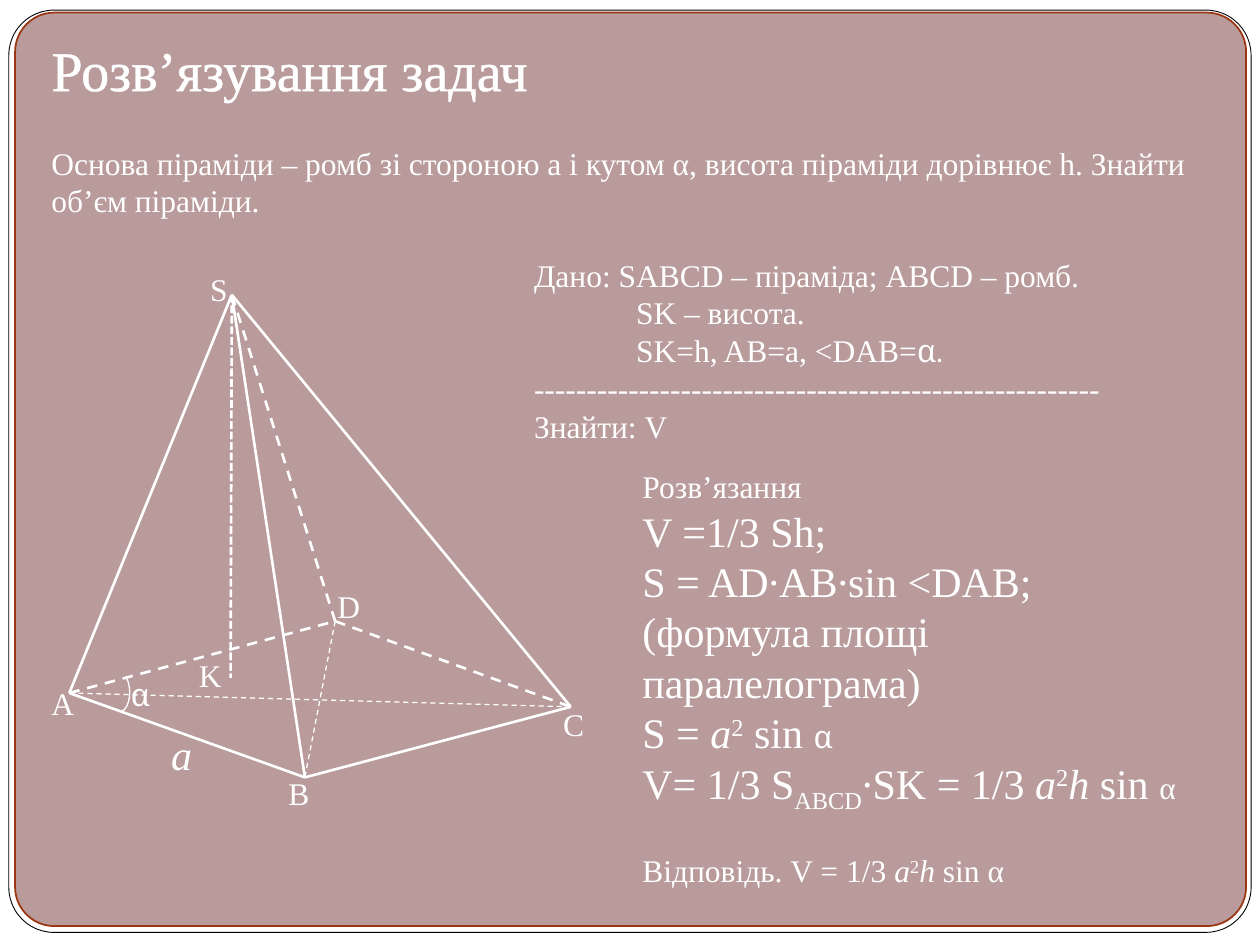
from lxml import etree
from pptx import Presentation
from pptx.dml.color import RGBColor
from pptx.enum.dml import MSO_LINE
from pptx.enum.shapes import MSO_CONNECTOR, MSO_SHAPE
from pptx.enum.text import MSO_AUTO_SIZE
from pptx.oxml.ns import qn
from pptx.util import Inches, Pt

ROUNDED = MSO_SHAPE.ROUNDED_RECTANGLE
ARC = MSO_SHAPE.ARC
STRAIGHT = MSO_CONNECTOR.STRAIGHT
DASH = MSO_LINE.DASH
SHORT_DASH = MSO_LINE.SQUARE_DOT
FIT_SHAPE = MSO_AUTO_SIZE.SHAPE_TO_FIT_TEXT
WHITE = "FFFFFF"
CAMBRIA = "Cambria"

deck = Presentation()
deck.slide_width, deck.slide_height = Inches(10), Inches(7.5)
COL = deck.slide_width / 100
ROW = deck.slide_height / 75
page = deck.slides.add_slide(deck.slide_layouts[6])


def paint(color_format, color):
    color_format.rgb = RGBColor.from_string(color)


def write_span(para, text, size=18, font="Times New Roman", italic=False, baseline=0, outline=0):
    span = para.add_run()
    span.text = text
    span.font.size = Pt(size)
    span.font.name = font
    span.font.italic = italic
    span.font.fill.solid()
    paint(span.font.fill.fore_color, WHITE)
    properties = span.font._element
    if baseline:
        properties.set("baseline", str(baseline * 1000))
    if outline:
        edge = etree.Element(qn("a:ln"), w=str(Pt(outline)))
        fill = etree.SubElement(edge, qn("a:solidFill"))
        etree.SubElement(fill, qn("a:srgbClr"), val=WHITE)
        properties.insert(0, edge)


panels = [
    (ROUNDED, (0.7, 0.8, 98.6, 73.2), [0.049], WHITE, "000000", 0.5),
    (ROUNDED, (1.2, 1, 97.7, 72.5), [0.043], "B99B9B", "9C3511", 1),
    (ARC, (8.7, 53.4, 1.6, 3.1), [176.377, 50.646], None, WHITE, 0.75),
]
for kind, (left, top, width, height), adjustments, fill, line, weight in panels:
    shape = page.shapes.add_shape(
        kind, int(left * COL), int(top * ROW), int(width * COL), int(height * ROW))
    shape.shadow.inherit = False
    for index, value in enumerate(adjustments):
        shape.adjustments[index] = value
    if fill:
        shape.fill.solid()
        paint(shape.fill.fore_color, fill)
    else:
        shape.fill.background()
    paint(shape.line.color, line)
    shape.line.width = Pt(weight)

vertices = {
    "S": (18.4, 23.4), "A": (5.5, 55), "B": (24.2, 61.7),
    "C": (45.3, 56.1), "D": (26.6, 49.3), "K": (18.3, 53.8),
}
edges = [
    ("AB", 1.5, None), ("AD", 1.5, DASH), ("DC", 1.5, DASH), ("BC", 1.5, None),
    ("AS", 1.5, None), ("SB", 1.5, None), ("SC", 1.5, None), ("DS", 1.5, DASH),
    ("SK", 1.5, SHORT_DASH), ("AC", 0.75, DASH), ("DB", 0.75, DASH),
]
for (start, end), weight, dash in edges:
    (x1, y1), (x2, y2) = vertices[start], vertices[end]
    edge = page.shapes.add_connector(
        STRAIGHT, int(x1 * COL), int(y1 * ROW), int(x2 * COL), int(y2 * ROW))
    paint(edge.line.color, WHITE)
    edge.line.width = Pt(weight)
    if dash:
        edge.line.dash_style = dash
    etree.SubElement(edge._element.spPr, qn("a:effectLst"))

big = {"size": 24}
big_italic = {"size": 24, "italic": True}
italic = {"italic": True}
big_power = {"size": 24, "baseline": 30}
big_index = {"size": 24, "baseline": -25}
power = {"baseline": 30}
cambria = {"font": CAMBRIA}

title = [(0, 0, [("Розв’язування задач", {"size": 32, "outline": 1.45})])]
task = [(0, 0, [(
    "Основа піраміди – ромб зі стороною а і кутом α, висота піраміди дорівнює h. "
    "Знайти об’єм піраміди.", {})])]
given = [
    (0, 0, [("Дано: SABCD – піраміда; ABCD – ромб.", {})]),
    (8.1, 0, [("SK – висота.", {})]),
    (8.1, 0, [("SK=h, AB=a, <DAB=", {}), ("α.", cambria)]),
    (0, 0, [("-" * 54, {})]),
    (0, 0, [("Знайти: V", {})]),
]
solution = [
    (0, 0, [("Розв’язання", {})]),
    (0, 0, [("V =1/3 Sh;", big)]),
    (0, 0, [("S = AD∙AB∙sin <DAB; (формула площі паралелограма)", big)]),
    (0, 0, [("S = ", big), ("a", big_italic), ("2", big_power), (" sin ", big), ("α", cambria)]),
    (0, 0, [("V= 1/3 S", big), ("ABCD", big_index), ("∙SK = 1/3 ", big), ("a", big_italic),
            ("2", big_power), ("h", big_italic), (" sin ", big), ("α", {})]),
    (0, 21, [("Відповідь. V = 1/3 ", {}), ("a", italic), ("2", power), ("h", italic),
             (" sin α", {})]),
]
boxes = [
    ((3.1, 10.9, 93.8, 7.1), task),
    ((3.1, 2.3, 44.5, 6.4), title),
    ((41.4, 19.8, 47.7, 16.2), given),
    ((50, 36.6, 46.9, 30.3), solution),
    ((12.6, 57.3, 3.1, 5), [(0, 0, [("a", big_italic)])]),
    ((9.4, 53.1, 3.1, 4), [(0, 0, [("α", cambria)])]),
]
label_corners = {
    "S": (15.7, 20.9), "A": (3.1, 53.8), "B": (21.9, 60.9),
    "C": (43.7, 55.5), "D": (25.8, 46.1), "K": (14.8, 51.6),
}
for name, corner in label_corners.items():
    boxes.append(((*corner, 3.1, 4), [(0, 0, [(name, {})])]))

for (left, top, width, height), paragraphs in boxes:
    box = page.shapes.add_textbox(
        int(left * COL), int(top * ROW), int(width * COL), int(height * ROW))
    frame = box.text_frame
    frame.word_wrap = True
    frame.auto_size = FIT_SHAPE
    for index, (indent, gap, spans) in enumerate(paragraphs):
        para = frame.add_paragraph() if index else frame.paragraphs[0]
        if indent:
            para._p.get_or_add_pPr().set("marL", str(int(indent * COL)))
        if gap:
            para.space_before = Pt(gap)
        for text, style in spans:
            write_span(para, text, **style)

deck.save("out.pptx")
